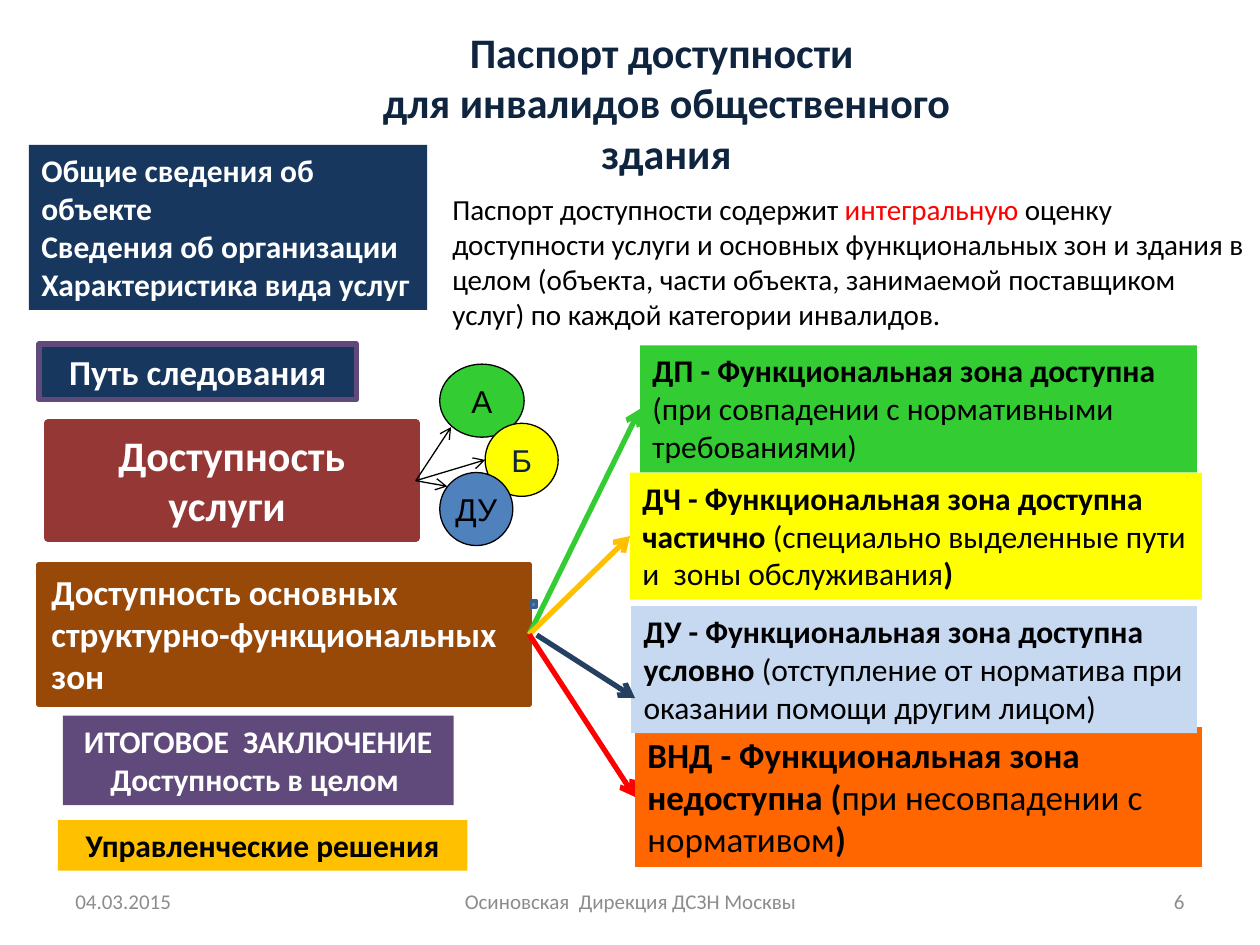
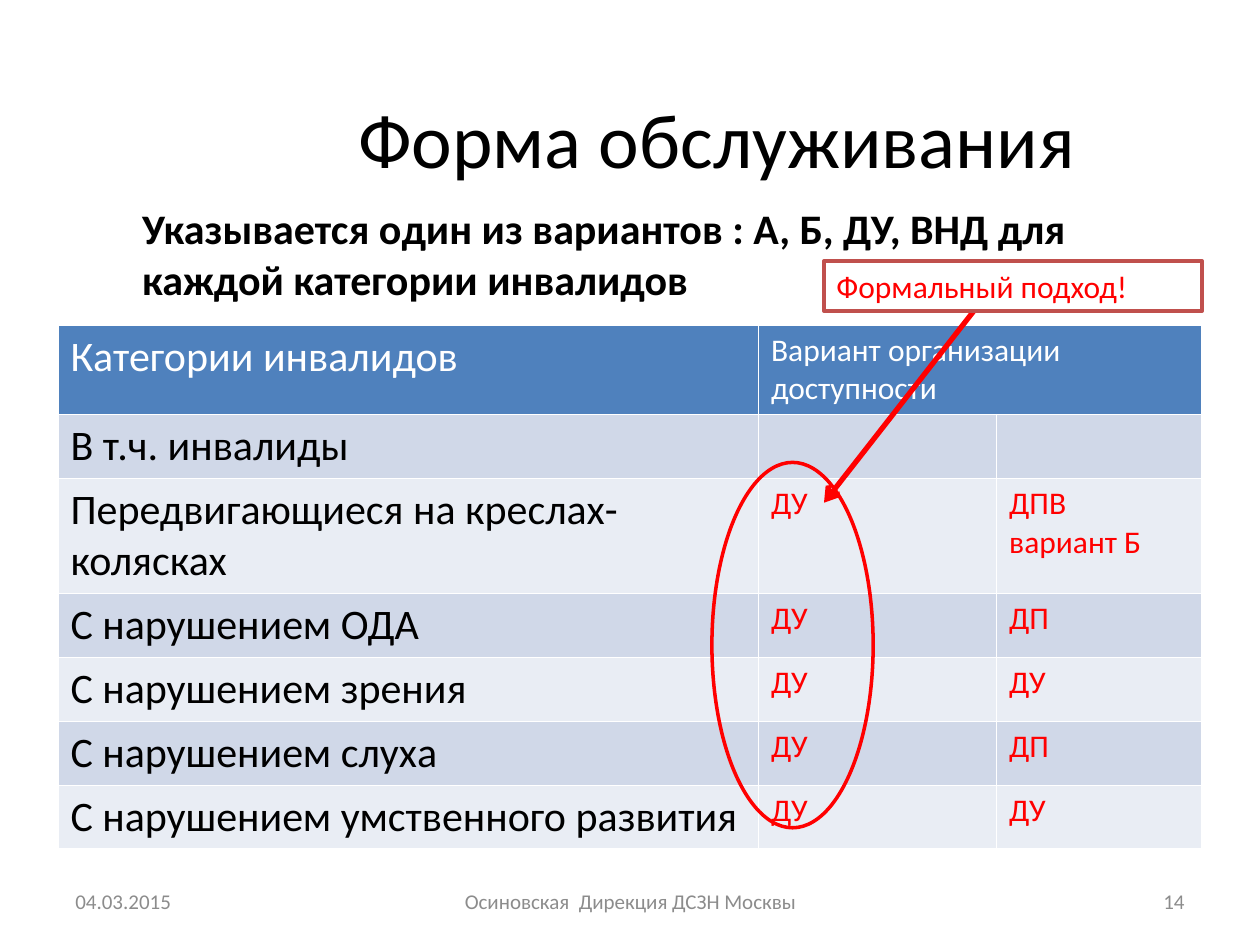
from lxml import etree
from pptx import Presentation
from pptx import util as u
from pptx.dml.color import RGBColor
from pptx.enum import shapes, text
from pptx.oxml import ns

SLIDE_WIDTH, SLIDE_HEIGHT = u.Inches(10), u.Inches(7.5)
COLUMN, ROW = SLIDE_WIDTH / 100, SLIDE_HEIGHT / 75

WHITE = RGBColor(0xFF, 0xFF, 0xFF)
BLACK = RGBColor(0x00, 0x00, 0x00)
RED = RGBColor(0xFF, 0x00, 0x00)
GREEN = RGBColor(0x33, 0xCC, 0x33)
YELLOW = RGBColor(0xFF, 0xFF, 0x00)
AMBER = RGBColor(0xFF, 0xC0, 0x00)
ORANGE = RGBColor(0xFF, 0x66, 0x00)
BLUE = RGBColor(0x4F, 0x81, 0xBD)
DARK_BLUE = RGBColor(0x3A, 0x5F, 0x8C)
PALE_BLUE = RGBColor(0xC6, 0xD9, 0xF1)
NAVY = RGBColor(0x17, 0x37, 0x5E)
STEEL = RGBColor(0x25, 0x40, 0x61)
INK = RGBColor(0x0F, 0x24, 0x3E)
PURPLE = RGBColor(0x60, 0x4A, 0x7B)
MAROON = RGBColor(0x95, 0x37, 0x35)
BROWN = RGBColor(0x98, 0x48, 0x07)
BRICK = RGBColor(0xC0, 0x50, 0x4D)
GREY = RGBColor(0x8C, 0x8C, 0x8C)
BANDS = (RGBColor(0xE9, 0xED, 0xF4), RGBColor(0xD0, 0xD8, 0xE8))

LEFT, CENTER, RIGHT = text.PP_ALIGN.LEFT, text.PP_ALIGN.CENTER, text.PP_ALIGN.RIGHT
TOP, MIDDLE = text.MSO_ANCHOR.TOP, text.MSO_ANCHOR.MIDDLE
RECTANGLE, OVAL = shapes.MSO_SHAPE.RECTANGLE, shapes.MSO_SHAPE.OVAL
LEFT_SIDE, RIGHT_SIDE, TOP_SIDE = 1, 3, 0

DATE = "04.03.2015"
FOOTER = "Осиновская  Дирекция ДСЗН Москвы"


def on_grid(left, top, width, height):
    return (round(left * COLUMN), round(top * ROW),
            round(width * COLUMN), round(height * ROW))


def write(frame, paragraphs, size, color, bold=False, align=LEFT,
          font="Calibri", anchor=TOP, wrap=True):
    frame.auto_size = text.MSO_AUTO_SIZE.NONE
    frame.word_wrap = wrap
    frame.vertical_anchor = anchor
    write_paragraphs(frame, paragraphs, size, color, bold, align, font)


def write_paragraphs(frame, paragraphs, size, color, bold=False, align=LEFT,
                     font="Calibri"):
    for index, pieces in enumerate(paragraphs):
        paragraph = frame.paragraphs[0] if index == 0 else frame.add_paragraph()
        paragraph.alignment = align
        for piece in [pieces] if isinstance(pieces, str) else pieces:
            words, change = (piece, {}) if isinstance(piece, str) else piece
            run = paragraph.add_run()
            run.text = words
            run.font.name = font
            run.font.size = u.Pt(size)
            run.font.bold = change.get("bold", bold)
            run.font.color.rgb = change.get("color", color)


def fill_placeholder(holder, place, paragraphs, size, color, **style):
    holder.left, holder.top, holder.width, holder.height = on_grid(*place)
    write(holder.text_frame, paragraphs, size, color, **style)


def add_label(slide, place, paragraphs, size, color, **style):
    label = slide.shapes.add_textbox(*on_grid(*place))
    write(label.text_frame, paragraphs, size, color, **style)


def add_figure(slide, preset, place, fill=None, line=None, weight=1):
    figure = slide.shapes.add_shape(preset, *on_grid(*place))
    figure.shadow.inherit = False
    if fill is None:
        figure.fill.background()
    else:
        figure.fill.solid()
        figure.fill.fore_color.rgb = fill
    if line is None:
        figure.line.fill.background()
    else:
        figure.line.color.rgb = line
        figure.line.width = u.Pt(weight)
    return figure


def add_box(slide, place, fill, paragraphs, size, color=WHITE, bold=True,
            align=LEFT, line=None, weight=1):
    box = add_figure(slide, RECTANGLE, place, fill, line, weight)
    write(box.text_frame, paragraphs, size, color, bold=bold, align=align)
    return box


def add_arrow(slide, start, end, color, weight, source=None, target=None):
    arrow = slide.shapes.add_connector(
        shapes.MSO_CONNECTOR.STRAIGHT,
        round(start[0] * COLUMN), round(start[1] * ROW),
        round(end[0] * COLUMN), round(end[1] * ROW))
    arrow.line.color.rgb = color
    arrow.line.width = u.Pt(weight)
    etree.SubElement(arrow.line._get_or_add_ln(), ns.qn("a:tailEnd"), type="arrow")
    etree.SubElement(arrow._element.spPr, ns.qn("a:effectLst"))
    if source is not None:
        arrow.begin_connect(source, RIGHT_SIDE)
    if target is not None:
        arrow.end_connect(target, LEFT_SIDE)
    return arrow


def add_footer(slide, number):
    for left, width, words, align in ((5, 23.3, DATE, LEFT),
                                      (34.2, 31.7, FOOTER, CENTER),
                                      (71.7, 23.3, number, RIGHT)):
        add_label(slide, (left, 69.5, width, 4), [words], 12, GREY,
                  align=align, anchor=MIDDLE)


def add_passport_sections(slide):
    add_box(slide, (2.3, 11.5, 31.6, 13.1), NAVY,
            ["Общие сведения об объекте", "Сведения об организации",
             "Характеристика вида услуг"], 18)
    add_box(slide, (3.1, 27.3, 25.2, 4.4), NAVY, ["Путь следования"], 20,
            align=CENTER, line=PURPLE, weight=3)
    service = add_box(slide, (3.8, 33.6, 29.2, 9.1), MAROON, ["Доступность услуги "],
                      24, align=CENTER, line=MAROON, weight=4.5)
    zones = add_box(slide, (3.1, 44.8, 38.9, 11.1), BROWN,
                    ["Доступность основных структурно-функциональных зон"], 20,
                    line=BROWN, weight=3)
    add_box(slide, (5, 56.8, 31, 7.1), PURPLE,
            ["ИТОГОВОЕ  ЗАКЛЮЧЕНИЕ", "Доступность в целом "], 18, align=CENTER)
    add_box(slide, (4.6, 65.1, 32.5, 4), AMBER, ["Управленческие решения"], 18,
            color=BLACK, align=CENTER)
    return service, zones


def add_zone_ratings(slide, zones):
    plain = {"bold": False}
    partial = add_box(slide, (50, 37.5, 45.4, 10.1), YELLOW, [[
        "ДЧ - Функциональная зона доступна частично ",
        ("(специально выделенные пути и  зоны обслуживания", plain), ")"]], 18, BLACK)
    full = add_box(slide, (50.8, 27.4, 44.2, 10.1), GREEN, [[
        "ДП - Функциональная зона доступна ",
        ("(при совпадении с нормативными требованиями)", plain)]], 18, BLACK)
    closed = add_box(slide, (50.4, 57.7, 45, 11.1), ORANGE, [[
        "ВНД - Функциональная зона недоступна (",
        ("при несовпадении с нормативом", plain), ")"]], 20, BLACK)
    add_box(slide, (50.1, 48.1, 44.9, 10.1), PALE_BLUE, [[
        "ДУ - Функциональная зона доступна условно ",
        ("(отступление от норматива при оказании помощи другим лицом)", plain)]],
        18, BLACK)
    add_figure(slide, RECTANGLE, (42.1, 47.7, 0.5, 0.5), BLUE, DARK_BLUE, 2)
    for end, color, rating in (((50.8, 32.4), GREEN, full),
                               ((50, 42.6), AMBER, partial),
                               ((50.4, 63.3), RED, closed)):
        add_arrow(slide, (42.1, 50.4), end, color, 3, zones, rating)
    add_arrow(slide, (42.6, 50.4), (50.4, 55.4), STEEL, 3)


def add_service_variants(slide, service):
    for place, fill, letter, color in (((34.9, 28.9, 6.7, 5.8), GREEN, "А", BLACK),
                                       ((38.5, 33.6, 5.8, 5.8), YELLOW, "Б", INK),
                                       ((34.9, 37.5, 5.8, 5.8), BLUE, "ДУ", BLACK)):
        variant = add_figure(slide, OVAL, place, fill, BLACK, 0.75)
        write(variant.text_frame, [letter], 18, color, align=CENTER,
              font="Arial", anchor=MIDDLE, wrap=False)
    for end in ((35.8, 33.9), (38.5, 36.5), (35.5, 38.6)):
        add_arrow(slide, (33, 38.1), end, BLACK, 0.75, service)


def build_passport(deck):
    slide = deck.slides.add_slide(deck.slide_layouts[1])
    heading, summary = slide.placeholders
    fill_placeholder(heading, (27.6, 1.6, 50.6, 13.1),
                     ["Паспорт доступности ", "для инвалидов общественного здания"],
                     24, INK, bold=True, align=CENTER)
    fill_placeholder(summary, (34.9, 14.7, 65.1, 10.3), [[
        "Паспорт доступности содержит ", ("интегральную", {"color": RED}),
        " оценку доступности услуги и основных функциональных зон и здания в целом "
        "(объекта, части объекта, занимаемой поставщиком услуг) по каждой категории "
        "инвалидов."]], 16.6, BLACK)
    properties = summary.text_frame.paragraphs[0]._p.get_or_add_pPr()
    properties.set("marL", "0")
    properties.set("indent", "0")
    etree.SubElement(properties, ns.qn("a:buNone"))
    service, zones = add_passport_sections(slide)
    add_zone_ratings(slide, zones)
    add_service_variants(slide, service)
    add_footer(slide, "6")


def add_categories_table(slide):
    rows = (
        (["Категории инвалидов"], ["Вариант организации доступности"], []),
        (["В т.ч. инвалиды"], [], []),
        (["Передвигающиеся на креслах-колясках"], ["ДУ"], ["ДПВ", "вариант Б"]),
        (["С нарушением ОДА"], ["ДУ"], ["ДП"]),
        (["С нарушением зрения"], ["ДУ"], ["ДУ"]),
        (["С нарушением слуха"], ["ДУ"], ["ДП"]),
        (["С нарушением умственного развития"], ["ДУ"], ["ДУ"]),
    )
    table = slide.shapes.add_table(len(rows), 3, *on_grid(4.6, 25.8, 90.8, 37)).table
    for column, width in zip(table.columns, (55.6, 18.9, 16.3)):
        column.width = round(width * COLUMN)
    for index, row in enumerate(rows):
        table.rows[index].height = round((5 if index else 7) * ROW)
        for position, paragraphs in enumerate(row):
            cell = table.cell(index, position)
            cell.fill.solid()
            cell.fill.fore_color.rgb = BANDS[index % 2] if index else BLUE
            color = WHITE if index == 0 else RED if position else BLACK
            write_paragraphs(cell.text_frame, paragraphs, 18 if position else 24, color)
    table.cell(0, 1).merge(table.cell(0, 2))


def build_service_form(deck):
    slide = deck.slides.add_slide(deck.slide_layouts[5])
    fill_placeholder(slide.shapes.title, (24.8, 4.7, 64.2, 12.5),
                     ["Форма обслуживания"], 44, BLACK, align=CENTER, anchor=MIDDLE)
    add_categories_table(slide)
    add_label(slide, (10.3, 15.6, 79.2, 9.1),
              ["Указывается один из вариантов : А, Б, ДУ, ВНД для каждой категории "
               "инвалидов"], 24, BLACK, bold=True)
    add_figure(slide, OVAL, (56.5, 36.7, 12.8, 29), line=RED, weight=2)
    pointer = add_arrow(slide, (80.4, 20.7), (65.4, 39.9), RED, 3)
    remark = add_box(slide, (65.4, 20.7, 30, 4), WHITE, ["Формальный подход!"], 18,
                     color=RED, bold=False, line=BRICK, weight=2)
    pointer.begin_connect(remark, TOP_SIDE)
    add_footer(slide, "14")


def main():
    deck = Presentation()
    deck.slide_width, deck.slide_height = SLIDE_WIDTH, SLIDE_HEIGHT
    build_passport(deck)
    build_service_form(deck)
    deck.save("out.pptx")


if __name__ == "__main__":
    main()
